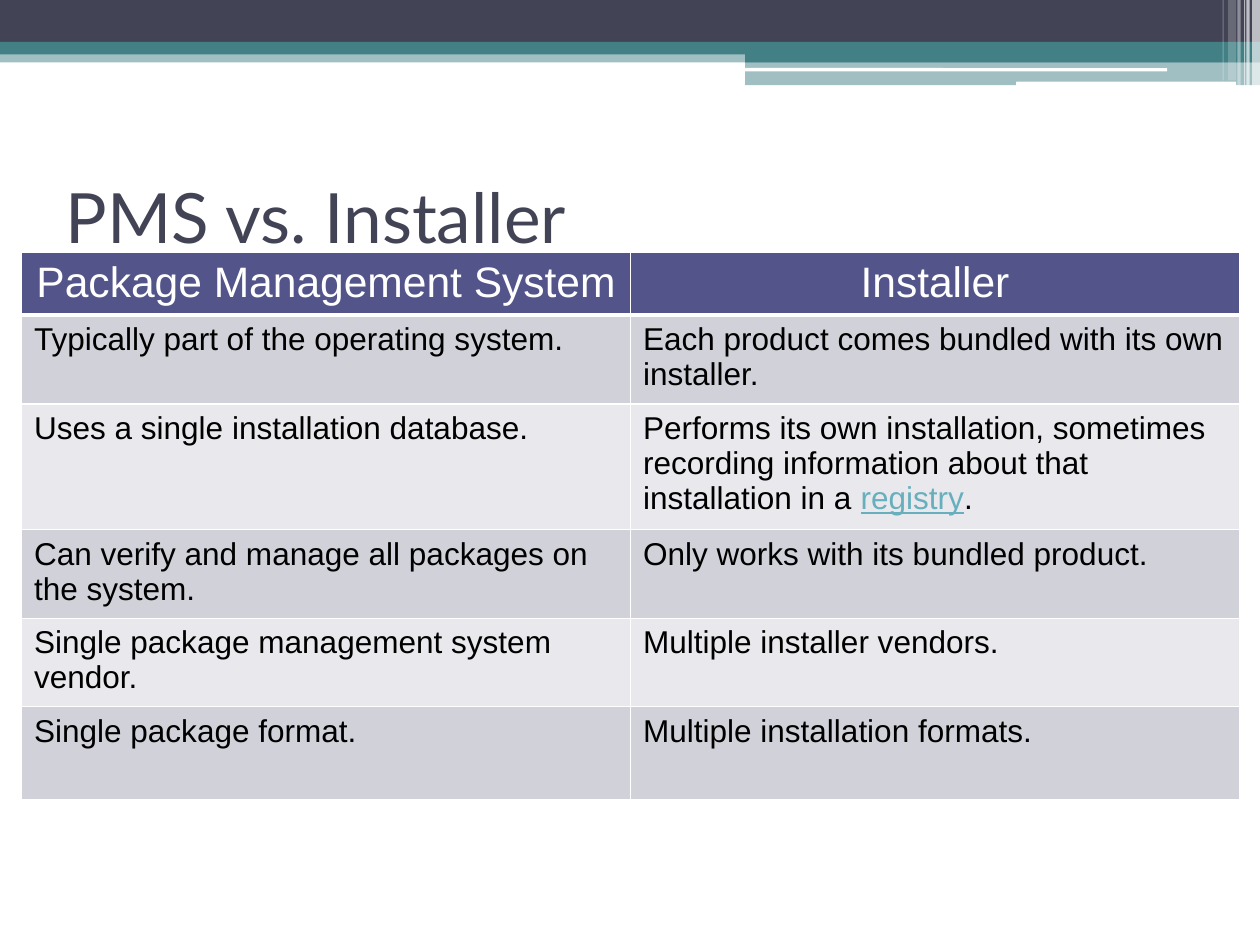
"""Build the slide comparing package management systems with installers."""
from lxml import etree
from pptx import Presentation
from pptx.dml.color import RGBColor
from pptx.enum.shapes import MSO_SHAPE
from pptx.enum.text import MSO_ANCHOR, PP_ALIGN
from pptx.oxml.ns import qn
from pptx.util import Inches, Pt

RECT, ROUNDED = MSO_SHAPE.RECTANGLE, MSO_SHAPE.ROUNDED_RECTANGLE
LEFT, CENTER = PP_ALIGN.LEFT, PP_ALIGN.CENTER
MIDDLE = MSO_ANCHOR.MIDDLE

NAVY, TEAL, WHITE, BLACK = "424456", "438086", "FFFFFF", "000000"
HEADER, LINK = "53548A", "67AFBD"
BANDS = ["D1D1DA", "E9E9ED"]

TITLE = "PMS vs. Installer"
LINK_WORD = "registry"
ROWS = [
    ("Package Management System", "Installer"),
    ("Typically part of the operating system.",
     "Each product comes bundled with its own installer."),
    ("Uses a single installation database.",
     "Performs its own installation, sometimes recording information about "
     "that installation in a registry."),
    ("Can verify and manage all packages on the system.",
     "Only works with its bundled product."),
    ("Single package management system vendor.", "Multiple installer vendors."),
    ("Single package format.", "Multiple installation formats."),
]
ROW_HEIGHTS = [0.56, 0.78, 1.11, 0.78, 0.78, 0.82]
COL_WIDTH = 5.37

BANNER = [
    (RECT, 0, 0.45, 11.11, 0.1, TEAL, 50),
    (RECT, 0, 0, 11.11, 0.38, NAVY, 100),
    (RECT, 0, 0.37, 11.11, 0.11, TEAL, 100),
    (RECT, 6.57, 0.44, 4.54, 0.11, TEAL, 100),
    (RECT, 6.57, 0.53, 4.54, 0.22, TEAL, 50),
    (ROUNDED, 6.57, 0.6, 3.72, 0.03, WHITE, 100),
    (ROUNDED, 8.96, 0.72, 1.94, 0.04, WHITE, 100),
]
STRIPES = [
    (11.04, 0.07, 0.76, 65), (10.99, 0.03, 0.76, 65), (10.97, 0.01, 0.76, 60),
    (10.91, 0.03, 0.76, 40), (10.83, 0.07, 0.71, 20), (10.78, 0.01, 0.71, 30),
]


def rgb(color):
    return RGBColor.from_string(color)


def set_font(font, size, name, color):
    font.size, font.name = Pt(size), name
    font.color.rgb = rgb(color)


def set_margins(box):
    box.margin_left = box.margin_right = Inches(0.11)
    box.margin_top = box.margin_bottom = Inches(0.06)


def add_bar(s, kind, x, y, w, h, color, opacity):
    sp = s.shapes.add_shape(kind, Inches(x), Inches(y), Inches(w), Inches(h))
    sp.shadow.inherit = False
    sp.line.fill.background()
    sp.fill.solid()
    sp.fill.fore_color.rgb = rgb(color)
    if opacity < 100:
        clr = sp.fill._xPr.find(".//" + qn("a:srgbClr"))
        etree.SubElement(clr, qn("a:alpha"), val=str(opacity * 1000))


def add_borders(cell, bottom):
    tc_pr = cell._tc.get_or_add_tcPr()
    for side, width in (("L", 1), ("R", 1), ("T", 1), ("B", bottom)):
        ln = etree.SubElement(tc_pr, qn("a:ln" + side), w=str(Pt(width)))
        fill = etree.SubElement(ln, qn("a:solidFill"))
        etree.SubElement(fill, qn("a:srgbClr"), val=WHITE)


def fill_cell(cell, text, row):
    is_header = row == 0
    set_margins(cell)
    add_borders(cell, 3 if is_header else 1)
    cell.fill.solid()
    cell.fill.fore_color.rgb = rgb(HEADER if is_header else BANDS[(row - 1) % 2])
    p = cell.text_frame.paragraphs[0]
    p.alignment = CENTER if is_header else LEFT
    set_font(p.font, 27 if is_header else 20, "Arial", WHITE if is_header else BLACK)
    p.font.bold = False
    before, word, after = text.partition(LINK_WORD)
    for part in filter(None, (before, word, after)):
        r = p.add_run()
        r.text = part
        if part == LINK_WORD:
            r.font.underline = True
            r.font.color.rgb = rgb(LINK)


def add_title(s):
    sp = s.shapes.title
    sp.left, sp.top, sp.width, sp.height = map(Inches, (0.47, 1.25, 10, 1.3))
    tf = sp.text_frame
    tf.text = TITLE
    tf.vertical_anchor = MIDDLE
    set_margins(tf)
    p = tf.paragraphs[0]
    p.alignment = LEFT
    set_font(p.font, 44, "Lato", NAVY)


def add_comparison(s):
    frame = s.shapes.add_table(
        len(ROWS), 2, Inches(0.19), Inches(2.22),
        Inches(2 * COL_WIDTH), Inches(sum(ROW_HEIGHTS)))
    table = frame.table
    for col in table.columns:
        col.width = Inches(COL_WIDTH)
    for i, (texts, height) in enumerate(zip(ROWS, ROW_HEIGHTS)):
        table.rows[i].height = Inches(height)
        for j, text in enumerate(texts):
            fill_cell(table.cell(i, j), text, i)


def main():
    prs = Presentation()
    prs.slide_width, prs.slide_height = Inches(11.11), Inches(8.33)
    s = prs.slides.add_slide(prs.slide_layouts[5])
    for bar in BANNER:
        add_bar(s, *bar)
    for x, w, h, opacity in STRIPES:
        add_bar(s, RECT, x, 0, w, h, WHITE, opacity)
    add_title(s)
    add_comparison(s)
    prs.save("out.pptx")


if __name__ == "__main__":
    main()
